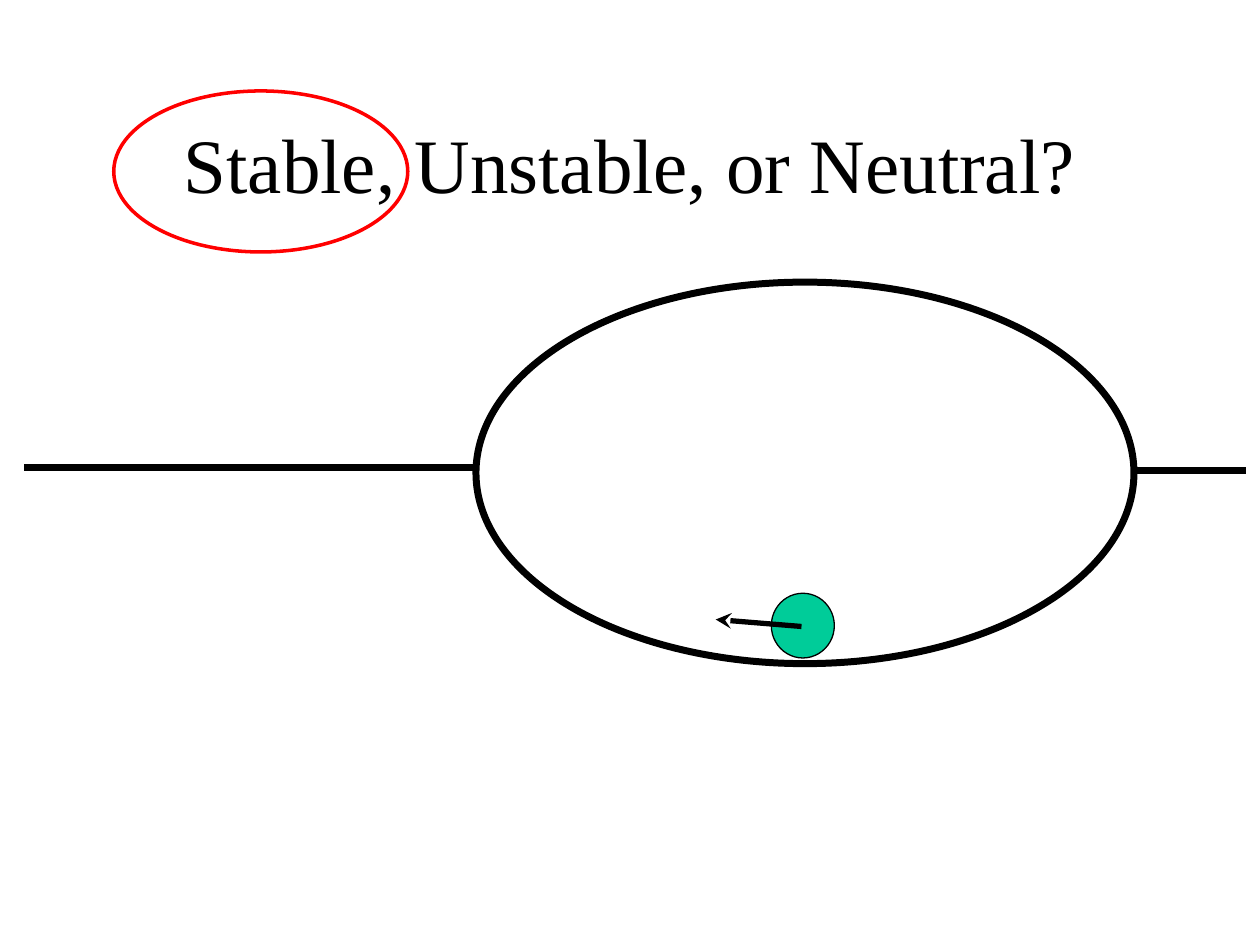
from lxml.etree import SubElement
from pptx import Presentation
from pptx.dml.color import RGBColor
from pptx.enum.shapes import MSO_CONNECTOR, MSO_SHAPE
from pptx.enum.text import MSO_ANCHOR, PP_ALIGN
from pptx.oxml.ns import qn
from pptx.util import Pt

BLACK = RGBColor(0x00, 0x00, 0x00)
RED = RGBColor(0xFF, 0x00, 0x00)
GREEN = RGBColor(0x00, 0xCC, 0x99)


def add_title(slide, text, left, top, width, height):
    box = slide.shapes.add_textbox(Pt(left), Pt(top), Pt(width), Pt(height))
    frame = box.text_frame
    frame.word_wrap = True
    frame.vertical_anchor = MSO_ANCHOR.MIDDLE
    frame.text = text
    paragraph = frame.paragraphs[0]
    paragraph.alignment = PP_ALIGN.CENTER
    font = paragraph.runs[0].font
    font.name = "Times New Roman"
    font.size = Pt(44)
    font.color.rgb = BLACK


def add_ellipse(slide, left, top, width, height, line_width, color=BLACK, fill=None):
    shape = slide.shapes.add_shape(
        MSO_SHAPE.OVAL, Pt(left), Pt(top), Pt(width), Pt(height))
    shape.shadow.inherit = False
    if fill is None:
        shape.fill.background()
    else:
        shape.fill.solid()
        shape.fill.fore_color.rgb = fill
    shape.line.color.rgb = color
    shape.line.width = Pt(line_width)


def add_line(slide, start, end, line_width, arrow=False):
    connector = slide.shapes.add_connector(
        MSO_CONNECTOR.STRAIGHT, *(Pt(value) for value in (*start, *end)))
    connector.line.color.rgb = BLACK
    connector.line.width = Pt(line_width)
    properties = connector._element.spPr
    if arrow:
        SubElement(properties.find(qn("a:ln")), qn("a:tailEnd"), type="stealth")
    SubElement(properties, qn("a:effectLst"))


def main():
    presentation = Presentation()
    presentation.slide_width = Pt(720)
    presentation.slide_height = Pt(540)
    slide = presentation.slides.add_slide(presentation.slide_layouts[6])

    add_title(slide, "Stable, Unstable, or Neutral?", 54, 48, 612, 90)

    # Oval track with a level line on each side
    add_ellipse(slide, 272, 161.2, 376, 218, 4)
    add_line(slide, (712, 269), (648, 269), 4)
    add_line(slide, (270, 267), (14, 267), 4)

    # Ball at the bottom and its direction of motion
    add_ellipse(slide, 440.8, 339, 36, 37, 0.75, fill=GREEN)
    add_line(slide, (458, 358), (409, 354), 3, arrow=True)

    # Ring around the answer
    add_ellipse(slide, 65, 52, 168, 92, 2, color=RED)

    presentation.save("out.pptx")


if __name__ == "__main__":
    main()
